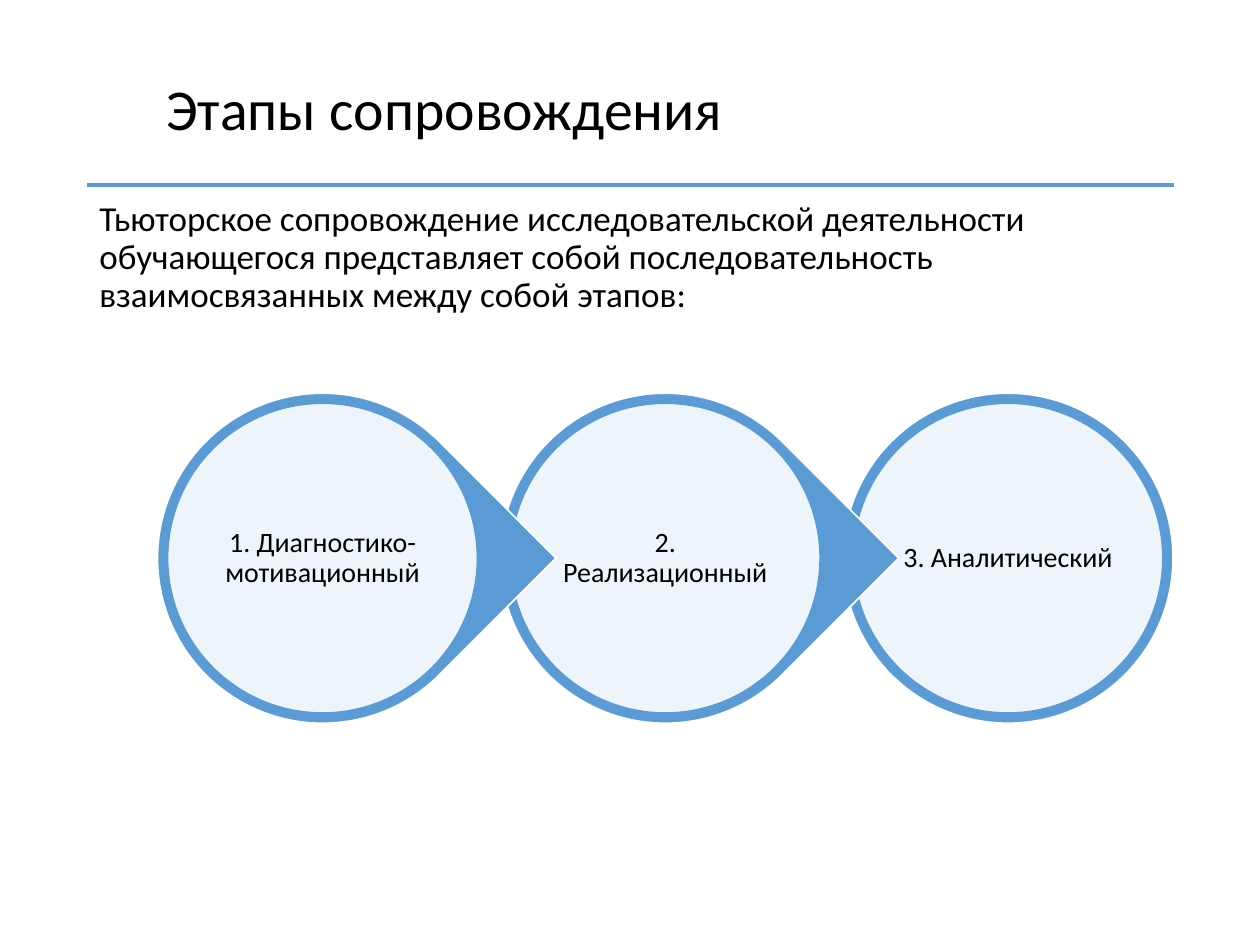
from pptx import Presentation
from pptx.dml.color import RGBColor
from pptx.enum import shapes, text
from pptx.oxml.ns import qn
from pptx.util import Inches, Pt
from lxml import etree

HEAD = "Этапы сопровождения"
INTRO = ("Тьюторское сопровождение исследовательской деятельности обучающегося "
         "представляет собой последовательность взаимосвязанных между собой этапов:")
STAGES = ["1. Диагностико-мотивационный", "2. Реализационный", "3. Аналитический"]
COLORS = {"blue": "5B9BD5", "white": "FFFFFF", "black": "000000"}
LEFT, MID, STEP = 2.56, 4.43, 2.72
OUTER, INNER, LABEL = 2.62, 2.46, 1.75
KIND = shapes.MSO_SHAPE


def rgb(name):
    return RGBColor.from_string(COLORS[name])


def write(box, words, size, align, anchor, inset=None):
    frame = box.text_frame
    frame.word_wrap = True
    frame.auto_size = text.MSO_AUTO_SIZE.NONE
    frame.vertical_anchor = anchor
    if inset is not None:
        frame.margin_left = frame.margin_right = Inches(inset)
        frame.margin_top = frame.margin_bottom = Inches(inset)
    frame.text = words
    para = frame.paragraphs[0]
    para.alignment = align
    para.line_spacing = 0.9
    para.font.name = "Calibri"
    para.font.size = Pt(size)
    para.font.color.rgb = rgb("black")


def square(mid, size):
    return [Inches(v) for v in (mid - size / 2, MID - size / 2, size, size)]


def draw(kind, mid, size, fill, line):
    shape = slide.shapes.add_shape(kind, *square(mid, size))
    shape.shadow.inherit = False
    shape.fill.solid()
    shape.fill.fore_color.rgb = rgb(fill)
    shape.line.color.rgb = rgb(line)
    shape.line.width = Pt(1)
    return shape


prs = Presentation()
prs.slide_width, prs.slide_height = Inches(10), Inches(7.5)
slide = prs.slides.add_slide(prs.slide_layouts[5])
align, anchor = text.PP_ALIGN, text.MSO_ANCHOR

rule = slide.shapes.add_connector(shapes.MSO_CONNECTOR.STRAIGHT, Inches(0.69),
                                  Inches(1.47), Inches(9.32), Inches(1.47))
rule.line.color.rgb = rgb("blue")
rule.line.width = Pt(2)
etree.SubElement(rule.line._get_or_add_ln().getparent(), qn("a:effectLst"))

intro = slide.shapes.add_textbox(Inches(0.69), Inches(1.55), Inches(8.62), Inches(5.21))
write(intro, INTRO, 20, align.LEFT, anchor.TOP)

title = slide.shapes.title
title.left, title.top = Inches(1.22), Inches(0.4)
title.width, title.height = Inches(8.1), Inches(0.98)
write(title, HEAD, 33, align.LEFT, anchor.MIDDLE)

last = len(STAGES) - 1
for i in range(last, -1, -1):
    mid = LEFT + i * STEP
    if i == last:
        draw(KIND.OVAL, mid, OUTER, "blue", "white")
    else:
        drop = draw(KIND.TEAR, mid, OUTER, "blue", "white")
        drop.adjustments[0] = 1
        drop.rotation = 45
    disc = draw(KIND.OVAL, mid, INNER, "white", "blue")
    tint = disc.fill._xPr.find(qn("a:solidFill"))[0]
    etree.SubElement(tint, qn("a:alpha"), val="90000")
    label = slide.shapes.add_textbox(*square(mid, LABEL))
    write(label, STAGES[i], 16, align.CENTER, anchor.MIDDLE, 0.02)

prs.save("out.pptx")
